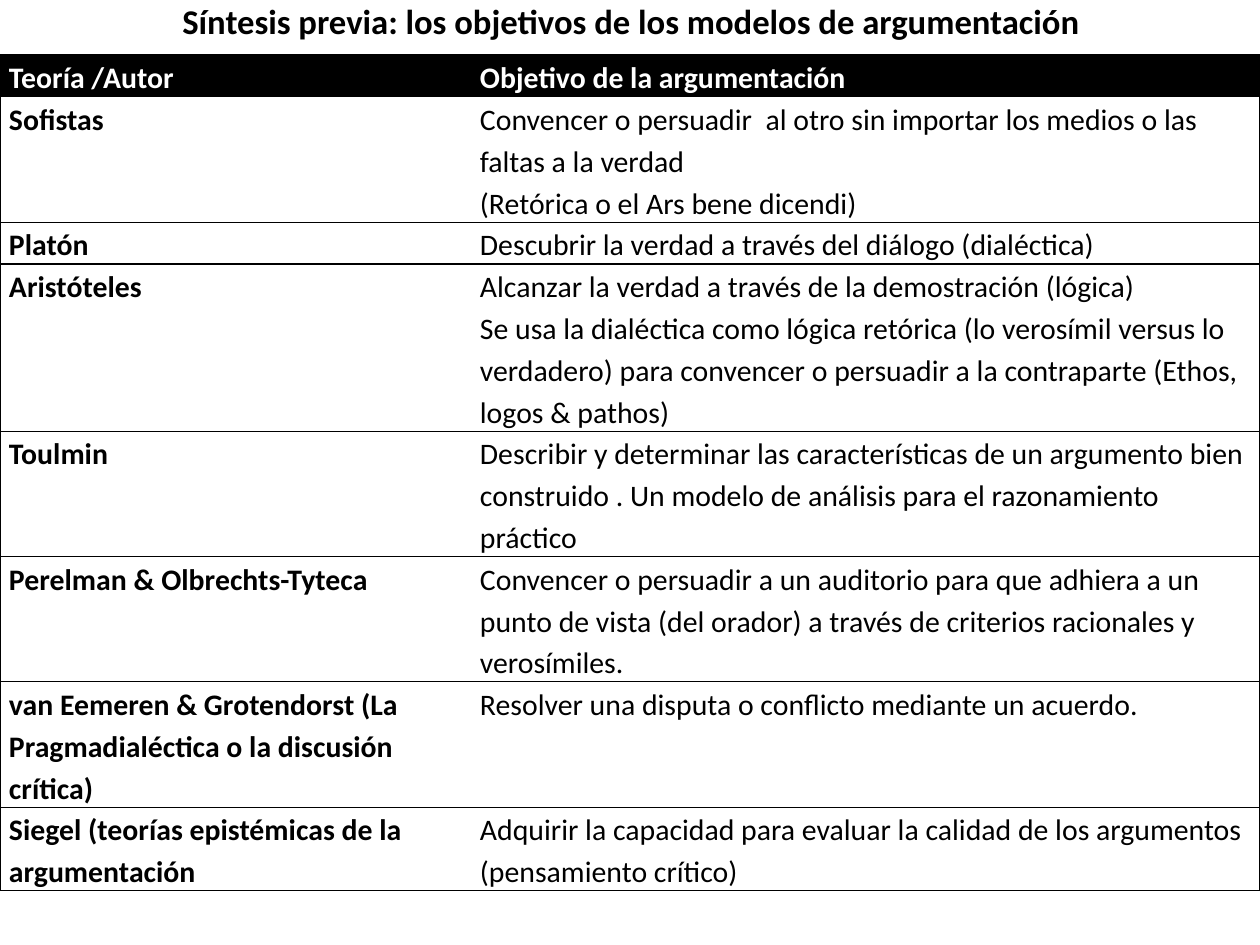
from lxml import etree
from pptx import Presentation
from pptx import util as u
from pptx.dml.color import RGBColor
from pptx.enum import text
from pptx.oxml.ns import qn

PX = 914400 // 126
FONT = "Calibri"
HEX = {"ink": "000000", "paper": "FFFFFF"}
TITLE = "Síntesis previa: los objetivos de los modelos de argumentación"
COLS = [471, 789]
# Lines of text in the row, theory, paragraphs of its aim
ROWS = [
    (1, "Teoría /Autor", ["Objetivo de la argumentación"]),
    (3, "Sofistas", [
        "Convencer o persuadir  al otro sin importar los medios o las faltas a la verdad",
        "(Retórica o el Ars bene dicendi)"]),
    (1, "Platón", ["Descubrir la verdad a través del diálogo (dialéctica)"]),
    (4, "Aristóteles", [
        "Alcanzar la verdad a través de la demostración (lógica)",
        "Se usa la dialéctica como lógica retórica (lo verosímil versus lo verdadero) "
        "para convencer o persuadir a la contraparte (Ethos, logos & pathos)"]),
    (3, "Toulmin", [
        "Describir y determinar las características de un argumento bien construido . "
        "Un modelo de análisis para el razonamiento práctico"]),
    (3, "Perelman & Olbrechts-Tyteca", [
        "Convencer o persuadir a un auditorio para que adhiera a un punto de vista "
        "(del orador) a través de criterios racionales y verosímiles."]),
    (3, "van Eemeren & Grotendorst (La Pragmadialéctica o la discusión crítica)",
     ["Resolver una disputa o conflicto mediante un acuerdo."]),
    (2, "Siegel (teorías epistémicas de la argumentación", [
        "Adquirir la capacidad para evaluar la calidad de los argumentos",
        "(pensamiento crítico)"]),
]


def px(n):
    return u.Emu(n * PX)


def add_run(para, words, size, color, bold):
    run = para.add_run()
    run.text = words
    font = run.font
    font.name, font.size, font.bold = FONT, u.Pt(size), bold
    font.color.rgb = RGBColor.from_string(HEX[color])


def set_edges(cell, shown):
    """Draw the sides named in shown (L, R, T, B) and clear the others."""
    props = cell._tc.get_or_add_tcPr()
    for side in "LRTB":
        line = etree.SubElement(props, qn(f"a:ln{side}"), w=str(u.Pt(0.75)))
        if side in shown:
            fill = etree.SubElement(line, qn("a:solidFill"))
            etree.SubElement(fill, qn("a:srgbClr"), val=HEX["ink"])
        else:
            etree.SubElement(line, qn("a:noFill"))


def fill_cell(cell, paras, head, first):
    set_edges(cell, "LTB" if first else "RTB")
    if head:
        cell.fill.solid()
        cell.fill.fore_color.rgb = RGBColor.from_string(HEX["ink"])
    else:
        cell.fill.background()
    cell.margin_left = cell.margin_right = px(9)
    cell.margin_top = cell.margin_bottom = 0
    frame = cell.text_frame
    for i, words in enumerate(paras):
        para = frame.add_paragraph() if i else frame.paragraphs[0]
        para.line_spacing = 1.15
        add_run(para, words, 17, "paper" if head else "ink", head or first)


def add_title(slide):
    title = slide.shapes.title
    title.left, title.top, title.width, title.height = px(1), px(0), px(1260), px(76)
    frame = title.text_frame
    frame.word_wrap = True
    frame.auto_size = text.MSO_AUTO_SIZE.NONE
    frame.vertical_anchor = text.MSO_ANCHOR.TOP
    frame.margin_top = frame.margin_bottom = 0
    para = frame.paragraphs[0]
    para.alignment = text.PP_ALIGN.CENTER
    add_run(para, TITLE, 19.8, "ink", True)


def add_grid(slide):
    highs = [lines * 125 // 3 for lines, _, _ in ROWS]
    table = slide.shapes.add_table(len(ROWS), len(COLS), px(0), px(55),
                                   px(sum(COLS)), px(sum(highs))).table
    table.horz_banding = False
    for col, wide in zip(table.columns, COLS):
        col.width = px(wide)
    for r, (_, name, aims) in enumerate(ROWS):
        table.rows[r].height = px(highs[r])
        for c, paras in enumerate(([name], aims)):
            fill_cell(table.cell(r, c), paras, r == 0, c == 0)


def main():
    deck = Presentation()
    deck.slide_width, deck.slide_height = px(1260), px(945)
    slide = deck.slides.add_slide(deck.slide_layouts[5])
    add_title(slide)
    add_grid(slide)
    deck.save("out.pptx")


if __name__ == "__main__":
    main()
